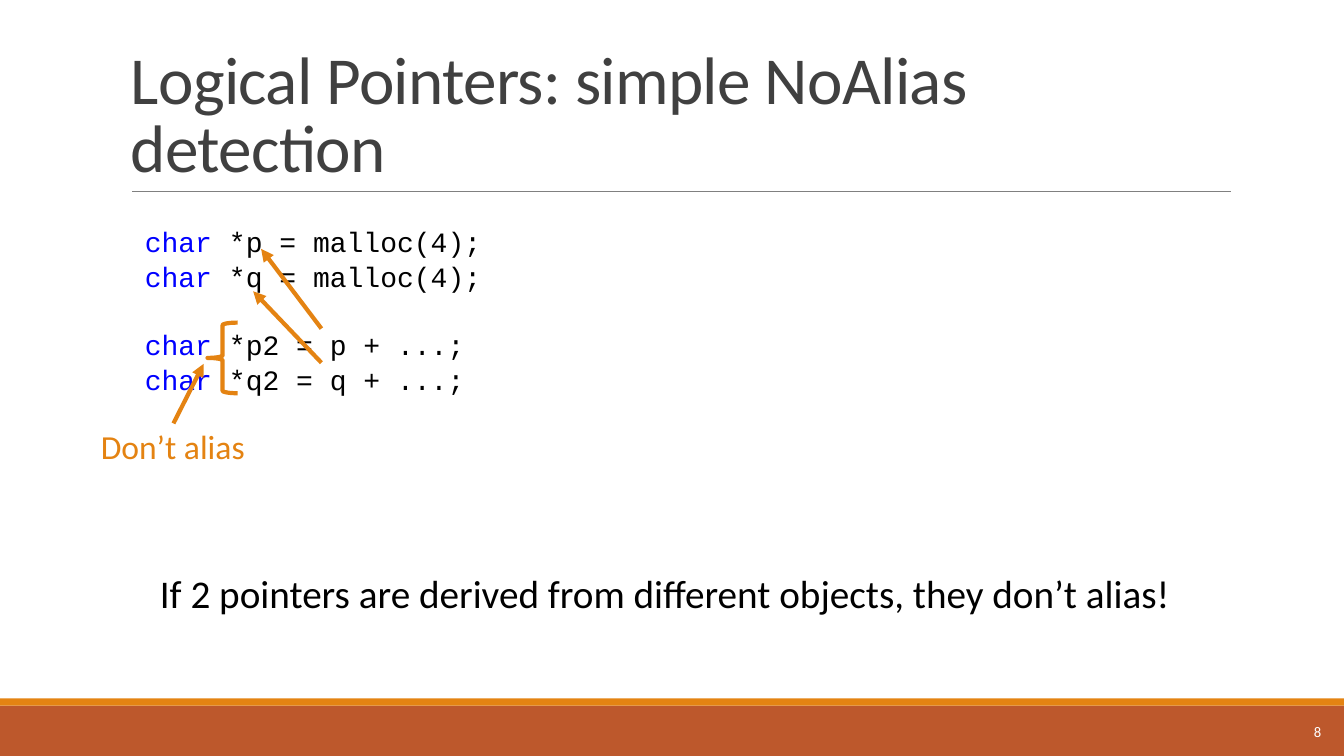
from lxml import etree
from pptx import Presentation
from pptx.dml.color import RGBColor
from pptx.enum.shapes import MSO_CONNECTOR as CONN, MSO_SHAPE as SHAPE
from pptx.enum.text import MSO_ANCHOR as ANCHOR, PP_ALIGN as ALIGN
from pptx.oxml.ns import qn
from pptx.util import Cm, Pt

COLORS = {
    "orange": "E48312",
    "rust": "BD582C",
    "rule": "808080",
    "title": "404040",
    "keyword": "0000FF",
    "black": "000000",
    "white": "FFFFFF",
}


def rgb(name):
    return RGBColor.from_string(COLORS[name])


def add_run(p, text, size, color, font="Calibri"):
    r = p.add_run()
    r.text = text
    r.font.name = font
    r.font.size = Pt(size)
    r.font.color.rgb = rgb(color)
    return r


prs = Presentation()
prs.slide_width, prs.slide_height = Cm(33.87), Cm(19.05)
s = prs.slides.add_slide(prs.slide_layouts[6])

for top, height, color in [(17.78, 1.27, "rust"), (17.6, 0.18, "orange")]:
    sp = s.shapes.add_shape(SHAPE.RECTANGLE, 0, Cm(top), prs.slide_width, Cm(height))
    sp.shadow.inherit = False
    sp.fill.solid()
    sp.fill.fore_color.rgb = rgb(color)
    sp.line.fill.background()

code = s.shapes.add_textbox(Cm(3.4), Cm(5.64), Cm(9.88), Cm(5.46))
tf = code.text_frame
tf.word_wrap = True
declarations = [" *p = malloc(4);", " *q = malloc(4);", " *p2 = p + ...;", " *q2 = q + ...;"]
for i, declaration in enumerate(declarations):
    p = tf.paragraphs[0] if i == 0 else tf.add_paragraph()
    p.line_spacing = 0.9
    p.space_after = Pt(3.2)
    if i == 2:
        p.space_before = Pt(23.6)
    add_run(p, "char", 20, "keyword", "Courier New")
    add_run(p, declaration, 20, "black", "Courier New")

labels = [
    (3.05, 0.79, 28.14, 4.04, "Logical Pointers: simple NoAlias detection",
     48, "title", ANCHOR.BOTTOM, ALIGN.LEFT, True),
    (3.78, 14.22, 26.29, 1.45,
     "If 2 pointers are derived from different objects, they don’t alias!",
     28, "black", ANCHOR.TOP, ALIGN.LEFT, True),
    (2.29, 10.62, 4.17, 1.27, "Don’t alias", 24, "orange", ANCHOR.TOP, ALIGN.LEFT, False),
    (29.92, 17.93, 3.63, 1.02, "8", 10.5, "white", ANCHOR.MIDDLE, ALIGN.RIGHT, True),
]
for left, top, width, height, text, size, color, anchor, align, wrap in labels:
    tf = s.shapes.add_textbox(Cm(left), Cm(top), Cm(width), Cm(height)).text_frame
    tf.word_wrap = wrap
    tf.vertical_anchor = anchor
    p = tf.paragraphs[0]
    p.alignment = align
    r = add_run(p, text, size, color)
    if color == "title":
        p.line_spacing = 0.85
        r.font._element.set("spc", "-50")

lines = [
    (3.33, 4.83, 31.01, 4.83, "rule", 0.5, False),
    (8.1, 8.28, 6.58, 6.27, "orange", 3, True),
    (8.1, 9.14, 6.38, 7.34, "orange", 3, True),
    (4.37, 10.67, 5.13, 9.17, "orange", 3, True),
]
for x1, y1, x2, y2, color, width, arrow in lines:
    line = s.shapes.add_connector(CONN.STRAIGHT, Cm(x1), Cm(y1), Cm(x2), Cm(y2))
    line.line.color.rgb = rgb(color)
    line.line.width = Pt(width)
    if arrow:
        etree.SubElement(line.line._get_or_add_ln(), qn("a:tailEnd"), type="triangle")
    etree.SubElement(line._element.spPr, qn("a:effectLst"))

brace = s.shapes.add_shape(SHAPE.LEFT_BRACE, Cm(5.23), Cm(8.13), Cm(0.76), Cm(1.78))
brace.shadow.inherit = False
brace.fill.background()
brace.line.color.rgb = rgb("orange")
brace.line.width = Pt(3)

prs.save("out.pptx")
